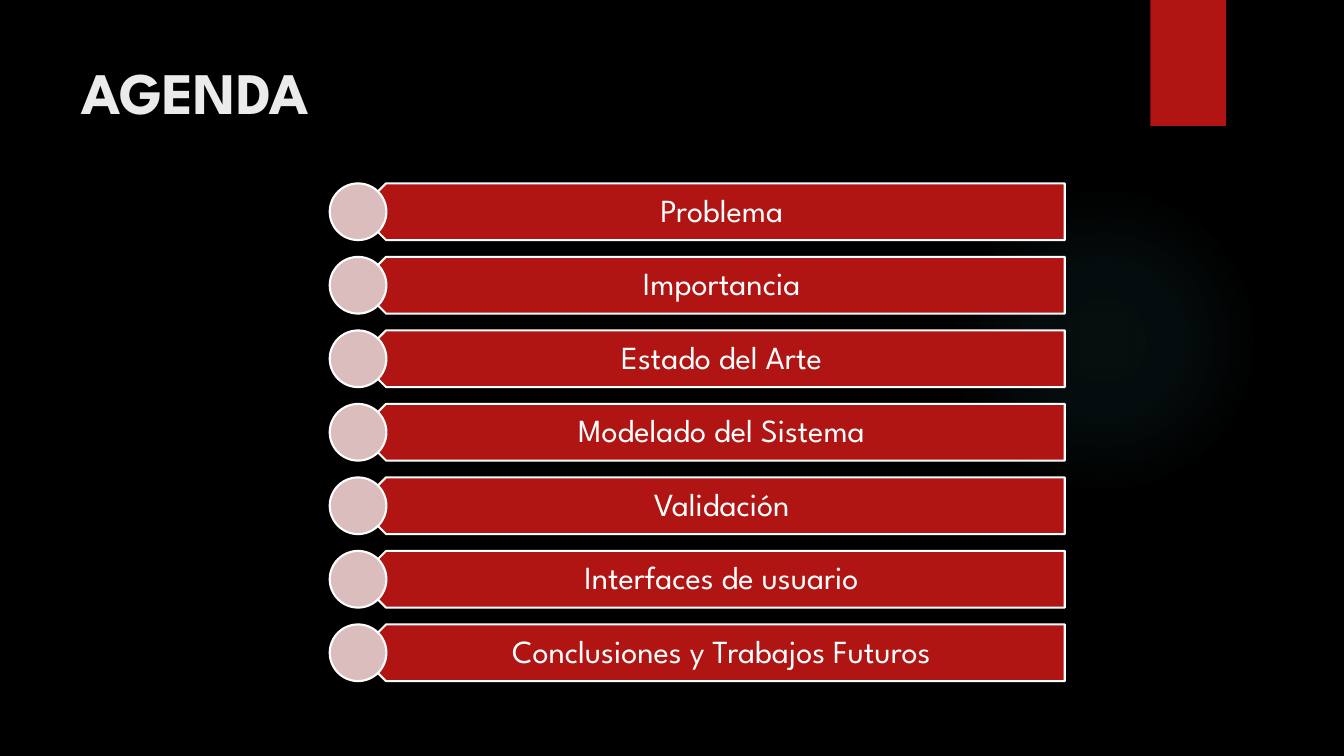
import pptx
import pptx.util
import pptx.dml.color
import pptx.enum.shapes
import pptx.enum.text
import pptx.oxml

Pt = pptx.util.Pt
SHAPE = pptx.enum.shapes.MSO_SHAPE
ANCHOR = pptx.enum.text.MSO_ANCHOR
ALIGN = pptx.enum.text.PP_ALIGN
RED = "B01513"


def paint(fmt, color):
    """Give a fill a solid colour from a hex string."""
    fmt.solid()
    fmt.fore_color.rgb = pptx.dml.color.RGBColor.from_string(color)


def add_text(box, text, size, color, insets, anchor):
    tf = box.text_frame
    tf.word_wrap = True
    tf.vertical_anchor = anchor
    tf.margin_left, tf.margin_top, tf.margin_right, tf.margin_bottom = map(Pt, insets)
    p = tf.paragraphs[0]
    r = p.add_run()
    r.text = text
    r.font.name = "League Spartan"
    r.font.size = Pt(size)
    paint(r.font.fill, color)
    return p


prs = pptx.Presentation()
prs.slide_width, prs.slide_height = Pt(960), Pt(540)
s = prs.slides.add_slide(prs.slide_layouts[6])
paint(s.background.fill, "000000")

# Faint glow and red tab
glow = s.shapes.add_shape(SHAPE.OVAL, Pt(677.5), Pt(131.8), Pt(221.8), Pt(221.8))
glow.shadow.inherit = False
glow.line.fill.background()
stops = "".join(
    f'<a:gs pos="{pos * 1000}"><a:srgbClr val="50B9C1">'
    f'<a:alpha val="{alpha * 1000}"/></a:srgbClr></a:gs>'
    for pos, alpha in [(0, 7), (36, 6), (69, 0)]
)
glow.element.spPr.find(pptx.oxml.ns.qn("a:prstGeom")).addnext(pptx.oxml.parse_xml(
    '<a:gradFill xmlns:a="http://schemas.openxmlformats.org/drawingml/2006/main">'
    f'<a:gsLst>{stops}</a:gsLst><a:path path="circle">'
    '<a:fillToRect l="50000" t="50000" r="50000" b="50000"/></a:path></a:gradFill>'
))

tab = s.shapes.add_shape(SHAPE.RECTANGLE, Pt(821.8), 0, Pt(54), Pt(90))
tab.shadow.inherit = False
paint(tab.fill, RED)
tab.line.fill.background()

title = s.shapes.add_textbox(Pt(51), Pt(36), Pt(741), Pt(110))
p = add_text(title, "AGENDA", 42, "EBEBEB", (7.2, 3.6, 7.2, 3.6), ANCHOR.TOP)
p.runs[0].font.bold = True

# Agenda rows: bar pointing left, label, circle over the point
topics = [
    "Problema",
    "Importancia",
    "Estado del Arte",
    "Modelado del Sistema",
    "Validación",
    "Interfaces de usuario",
    "Conclusiones y Trabajos Futuros",
]
row_top, row_pitch, row_height = 131, 52.5, 40.5
for i, topic in enumerate(topics):
    top = Pt(row_top + i * row_pitch)
    height = Pt(row_height)
    bar = s.shapes.add_shape(SHAPE.PENTAGON, Pt(255.5), top, Pt(505), height)
    bar.rotation = 180
    label = s.shapes.add_textbox(Pt(265.7), top, Pt(494.8), height)
    p = add_text(label, topic, 23, "FFFFFF", (18, 7.2, 13, 7.2), ANCHOR.MIDDLE)
    p.alignment = ALIGN.CENTER
    p.line_spacing = 0.9
    p.space_after = Pt(8)
    circle = s.shapes.add_shape(SHAPE.OVAL, Pt(235.5), top, height, height)
    for sp, color in [(bar, RED), (circle, "DCBDBD")]:
        sp.shadow.inherit = False
        paint(sp.fill, color)
        paint(sp.line.fill, "FFFFFF")
        sp.line.width = Pt(1.5)

prs.save("out.pptx")
